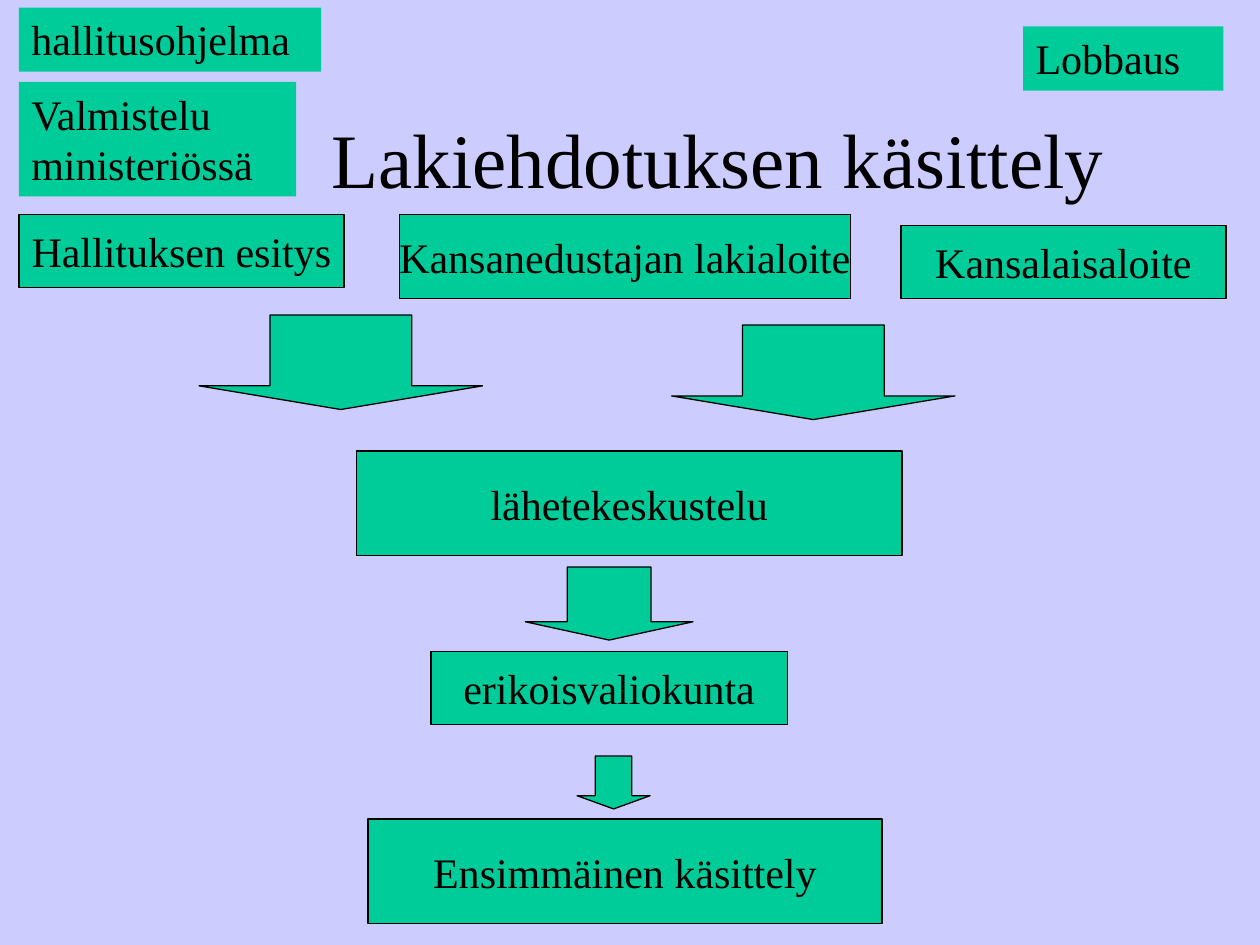
import pptx
import pptx.util
import pptx.dml.color
import pptx.enum.shapes
import pptx.enum.text
from dataclasses import dataclass

Inches = pptx.util.Inches
Pt = pptx.util.Pt
RGB = pptx.dml.color.RGBColor
SHAPES = pptx.enum.shapes.MSO_SHAPE
ALIGN = pptx.enum.text.PP_ALIGN
ANCHOR = pptx.enum.text.MSO_ANCHOR
AUTO_SIZE = pptx.enum.text.MSO_AUTO_SIZE


@dataclass(frozen=True)
class Theme:
    background: RGB = RGB(0xCC, 0xCC, 0xFF)
    fill: RGB = RGB(0x00, 0xCC, 0x99)
    ink: RGB = RGB(0x00, 0x00, 0x00)
    font: str = "Times New Roman"
    title_size: float = 44
    label_size: float = 24
    line_width: float = 0.75


THEME = Theme()

SOURCES = [
    ("Hallituksen esitys", (0.15, 1.7, 2.58, 0.58)),
    ("Kansanedustajan lakialoite", (3.17, 1.7, 3.58, 0.67)),
    ("Kansalaisaloite", (7.15, 1.79, 2.58, 0.58)),
]
STAGES = [
    ("lähetekeskustelu", (2.83, 3.58, 4.33, 0.83)),
    ("erikoisvaliokunta", (3.42, 5.17, 2.83, 0.58)),
    ("Ensimmäinen käsittely", (2.92, 6.5, 4.08, 0.83)),
]
ARROWS = [
    (1.58, 2.5, 2.25, 0.75),
    (5.33, 2.58, 2.25, 0.75),
    (4.17, 4.5, 1.33, 0.58),
    (4.58, 6, 0.58, 0.42),
]
BACKGROUND_NOTES = [
    ("Lobbaus", (8.12, 0.21, 1.59, 0.51)),
    ("Valmistelu ministeriössä", (0.15, 0.65, 2.2, 0.91)),
    ("hallitusohjelma", (0.15, 0.06, 2.4, 0.51)),
]


def write(frame, text, size, align, anchor):
    frame.text = text
    frame.vertical_anchor = anchor
    paragraph = frame.paragraphs[0]
    paragraph.alignment = align
    paragraph.font.name = THEME.font
    paragraph.font.size = Pt(size)
    paragraph.font.color.rgb = THEME.ink


def add_filled(slide, kind, box, outlined=True):
    shape = slide.shapes.add_shape(kind, *map(Inches, box))
    shape.shadow.inherit = False
    shape.fill.solid()
    shape.fill.fore_color.rgb = THEME.fill
    if outlined:
        shape.line.color.rgb = THEME.ink
        shape.line.width = Pt(THEME.line_width)
    else:
        shape.line.fill.background()
    return shape


def add_title(slide, text, box):
    title = slide.shapes.title
    title.left, title.top, title.width, title.height = map(Inches, box)
    write(title.text_frame, text, THEME.title_size, ALIGN.CENTER, ANCHOR.MIDDLE)


def add_step(slide, text, box):
    frame = add_filled(slide, SHAPES.RECTANGLE, box).text_frame
    frame.word_wrap = False
    write(frame, text, THEME.label_size, ALIGN.CENTER, ANCHOR.MIDDLE)


def add_arrow(slide, box):
    arrow = add_filled(slide, SHAPES.DOWN_ARROW, box)
    arrow.adjustments[0] = 0.5
    arrow.adjustments[1] = 0.25


def add_note(slide, text, box):
    frame = add_filled(slide, SHAPES.RECTANGLE, box, outlined=False).text_frame
    frame.word_wrap = True
    frame.auto_size = AUTO_SIZE.SHAPE_TO_FIT_TEXT
    write(frame, text, THEME.label_size, ALIGN.LEFT, ANCHOR.TOP)


def main():
    presentation = pptx.Presentation()
    presentation.slide_width = Inches(10)
    presentation.slide_height = Inches(7.5)
    slide = presentation.slides.add_slide(presentation.slide_layouts[5])
    slide.background.fill.solid()
    slide.background.fill.fore_color.rgb = THEME.background

    add_title(slide, "Lakiehdotuksen käsittely", (1.45, 0.63, 8.5, 1.25))
    for text, box in SOURCES + STAGES:
        add_step(slide, text, box)
    for box in ARROWS:
        add_arrow(slide, box)
    for text, box in BACKGROUND_NOTES:
        add_note(slide, text, box)

    presentation.save("out.pptx")


if __name__ == "__main__":
    main()
